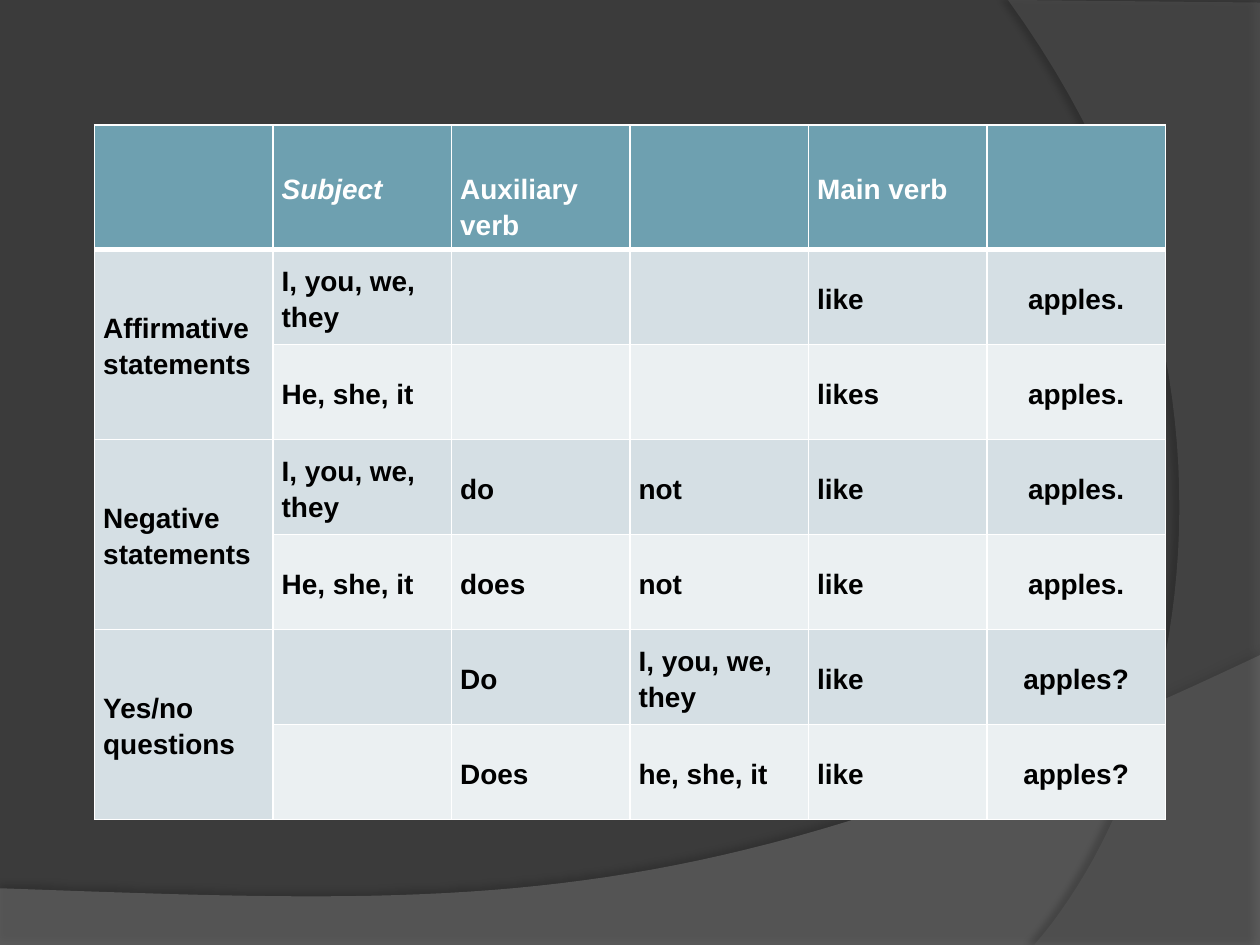
import pptx
import pptx.dml.color
import pptx.enum.text
import pptx.oxml
import pptx.oxml.ns
import pptx.util

Pt = pptx.util.Pt
COLORS = {
    "background": "3B3B3B", "wave": "7F7F7F", "arc": "5E5E5E",
    "header": "6EA0B0", "band": "D5DFE4", "light": "EBF0F2",
    "white": "FFFFFF", "black": "000000",
}
NS = pptx.oxml.ns.nsdecls("a")
HEADER = ["", "Subject", "Auxiliary verb", "", "Main verb", ""]
ROWS = [
    ["Affirmative\nstatements", "I, you, we, they", "", "", "like", "apples."],
    ["", "He, she, it", "", "", "likes", "apples."],
    ["Negative\nstatements", "I, you, we, they", "do", "not", "like", "apples."],
    ["", "He, she, it", "does", "not", "like", "apples."],
    ["Yes/no\nquestions", "", "Do", "I, you, we, they", "like", "apples?"],
    ["", "", "Does", "he, she, it", "like", "apples?"],
]


def rgb(name):
    """Return the named colour."""
    return pptx.dml.color.RGBColor.from_string(COLORS[name])


def bezier(p0, p1, p2, p3, steps=48):
    """Return points along a cubic curve, without its start."""
    points = []
    for i in range(1, steps + 1):
        t = i / steps
        weights = ((1 - t) ** 3, 3 * t * (1 - t) ** 2, 3 * t * t * (1 - t), t ** 3)
        points.append(tuple(sum(w * p[axis] for w, p in zip(weights, (p0, p1, p2, p3)))
                            for axis in (0, 1)))
    return points


def add_sheet(s, points, color, opacity, shadow_opacity, distance, angle):
    """Draw a translucent curved sheet with a soft shadow."""
    points = [(Pt(x), Pt(y)) for x, y in points]
    builder = s.shapes.build_freeform(*points[0], scale=1.0)
    builder.add_line_segments(points[1:], close=True)
    sp = builder.convert_to_shape()
    sp.fill.solid()
    sp.fill.fore_color.rgb = rgb(color)
    sp.line.fill.background()
    sp.shadow.inherit = False
    sppr = sp._element.spPr
    fill = sppr.find(pptx.oxml.ns.qn("a:solidFill"))
    fill[0].append(pptx.oxml.parse_xml(f'<a:alpha {NS} val="{opacity * 1000}"/>'))
    sppr.find(pptx.oxml.ns.qn("a:effectLst")).append(pptx.oxml.parse_xml(
        f'<a:outerShdw {NS} blurRad="{Pt(4)}" dist="{Pt(distance)}" dir="{angle * 60000}" '
        f'algn="ctr" rotWithShape="0"><a:srgbClr val="{COLORS["black"]}">'
        f'<a:alpha val="{shadow_opacity * 1000}"/></a:srgbClr></a:outerShdw>'))


def add_backdrop(s, width, height):
    """Fill the slide and lay the two curved sheets over it."""
    s.background.fill.solid()
    s.background.fill.fore_color.rgb = rgb("background")
    wave = bezier((width, 374.4), (402.5, 524.9), (281.5, 517.7), (0, 507.6))
    add_sheet(s, [(0, height), (width, height), (width, 374.4)] + wave,
              "wave", 45, 35, 3.5, 270)
    arc = bezier((591, height), (673.2, 445.7), (733, 216), (576, 0))
    add_sheet(s, [(width, 1.5), (width, height), (591, height)] + arc,
              "arc", 40, 45, 4, 180)


def style_cell(cell, text, fill, color, bottom=1, italic=False, centered=False):
    """Write a cell and give it its fill, borders and font."""
    tcpr = cell._tc.get_or_add_tcPr()
    for side, weight in (("L", 1), ("R", 1), ("T", 1), ("B", bottom)):
        tcpr.append(pptx.oxml.parse_xml(
            f'<a:ln{side} {NS} w="{Pt(weight)}"><a:solidFill>'
            f'<a:srgbClr val="{COLORS["white"]}"/></a:solidFill></a:ln{side}>'))
    cell.fill.solid()
    cell.fill.fore_color.rgb = rgb(fill)
    cell.margin_left = cell.margin_right = cell.margin_top = cell.margin_bottom = Pt(5)
    cell.vertical_anchor = pptx.enum.text.MSO_ANCHOR.MIDDLE
    if not text:
        return
    cell.text_frame.text = text
    for p in cell.text_frame.paragraphs:
        p.line_spacing = 1.15
        if centered:
            p.alignment = pptx.enum.text.PP_ALIGN.CENTER
        for r in p.runs:
            r.font.name = "Arial"
            r.font.size = Pt(16)
            r.font.bold = True
            r.font.italic = italic
            r.font.color.rgb = rgb(color)


def add_grammar_table(s, left, top, width, header_height, row_height):
    """Add the sentence pattern table with paired rows."""
    count = len(HEADER)
    height = header_height + row_height * len(ROWS)
    table = s.shapes.add_table(len(ROWS) + 1, count, Pt(left), Pt(top),
                               Pt(width), Pt(height)).table
    for column in table.columns:
        column.width = Pt(width / count)
    for i, row in enumerate(table.rows):
        row.height = Pt(row_height if i else header_height)
    for j, text in enumerate(HEADER):
        style_cell(table.cell(0, j), text, "header", "white", bottom=3,
                   italic=text == "Subject")
    table.cell(0, 2).margin_top = Pt(25.5)
    for i, row in enumerate(ROWS, 1):
        for j, text in enumerate(row):
            fill = "band" if i % 2 or j == 0 else "light"
            style_cell(table.cell(i, j), text, fill, "black", centered=j == count - 1)
    for i in range(1, len(ROWS), 2):
        table.cell(i, 0).merge(table.cell(i + 1, 0))


def main():
    """Build and save the slide."""
    prs = pptx.Presentation()
    prs.slide_width, prs.slide_height = Pt(720), Pt(540)
    s = prs.slides.add_slide(prs.slide_layouts[6])
    add_backdrop(s, 720, 540)
    add_grammar_table(s, 54, 71.3, 612, 69.1, 54.3)
    prs.save("out.pptx")


if __name__ == "__main__":
    main()
